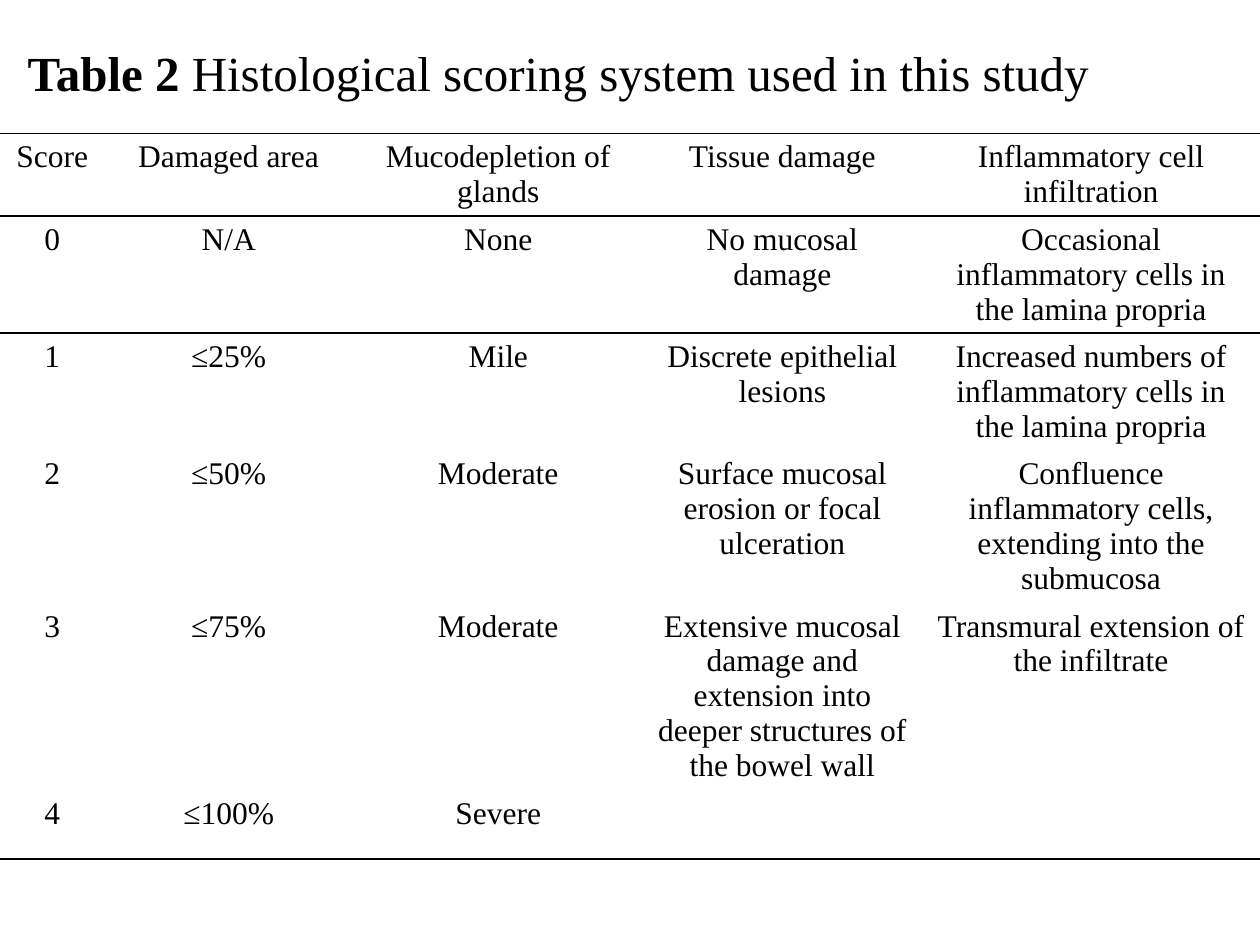
from lxml.etree import SubElement
from pptx import Presentation
from pptx.dml.color import RGBColor
from pptx.enum.text import MSO_ANCHOR, PP_ALIGN
from pptx.oxml.ns import qn
from pptx.util import Inches, Pt

FONT = "Times New Roman"
BLACK = "000000"
COLS = [0.83, 1.97, 2.31, 2.2, 2.7]
HEIGHTS = [0.55, 0.55, 0.54, 0.55, 0.79, 0.55]
RULES = {0, 1, 2, 6}
ROWS = [
    ["Score", "Damaged area", "Mucodepletion of glands", "Tissue damage",
     "Inflammatory cell infiltration"],
    ["0", "N/A", "None", "No mucosal damage",
     "Occasional inflammatory cells in the lamina propria"],
    ["1", "≤25%", "Mile", "Discrete epithelial lesions",
     "Increased numbers of inflammatory cells in the lamina propria"],
    ["2", "≤50%", "Moderate", "Surface mucosal erosion or focal ulceration",
     "Confluence inflammatory cells, extending into the submucosa"],
    ["3", "≤75%", "Moderate",
     "Extensive mucosal damage and extension into deeper structures of the bowel wall",
     "Transmural extension of the infiltrate"],
    ["4", "≤100%", "Severe", "", ""],
]


def color(text):
    """Return the colour for a hex string."""
    return RGBColor.from_string(text)


def write(para, text, size=18, bold=False, align=PP_ALIGN.CENTER, ink=BLACK):
    """Add a formatted run to a paragraph."""
    para.alignment = align
    run = para.add_run()
    run.text = text
    font = run.font
    font.name, font.size, font.bold = FONT, Pt(size), bold
    font.color.rgb = color(ink)


def edge(cell, sides):
    """Rule the named sides of a cell and clear the others."""
    props = cell._tc.get_or_add_tcPr()
    for spot, side in enumerate("LRTB"):
        line = SubElement(props, qn(f"a:ln{side}"), w=str(Pt(1)))
        if side in sides:
            fill = SubElement(line, qn("a:solidFill"))
            SubElement(fill, qn("a:srgbClr"), val=BLACK)
        else:
            SubElement(line, qn("a:noFill"))
        props.insert(spot, line)


def add_title(slide, left, top, width, height):
    """Place the table caption in the title placeholder."""
    title = slide.shapes.title
    title.left, title.top, title.width, title.height = map(
        Inches, (left, top, width, height))
    frame = title.text_frame
    frame.word_wrap = True
    frame.vertical_anchor = MSO_ANCHOR.TOP
    para = frame.paragraphs[0]
    write(para, "Table 2 ", size=28, bold=True, align=PP_ALIGN.LEFT)
    write(para, "Histological scoring system used in this study",
          size=28, align=PP_ALIGN.LEFT)


def add_scores(slide, left, top, width, height):
    """Place the scoring table in the given box."""
    box = map(Inches, (left, top, width, height))
    table = slide.shapes.add_table(len(ROWS), len(COLS), *box).table
    table.first_row = table.horz_banding = False
    for col, size in zip(table.columns, COLS):
        col.width = Inches(size)
    for r, (row, size) in enumerate(zip(ROWS, HEIGHTS)):
        table.rows[r].height = Inches(size)
        sides = ("T" if r in RULES else "") + ("B" if r + 1 in RULES else "")
        for c, text in enumerate(row):
            cell = table.cell(r, c)
            cell.fill.background()
            edge(cell, sides)
            if text:
                write(cell.text_frame.paragraphs[0], text)


def main():
    """Build and save the slide."""
    deck = Presentation()
    deck.slide_width, deck.slide_height = Inches(10), Inches(7.5)
    slide = deck.slides.add_slide(deck.slide_layouts[5])
    add_scores(slide, 0, 1.06, 10, 6.15)
    add_title(slide, 0.12, 0.29, 9.88, 0.57)
    deck.save("out.pptx")


if __name__ == "__main__":
    main()
